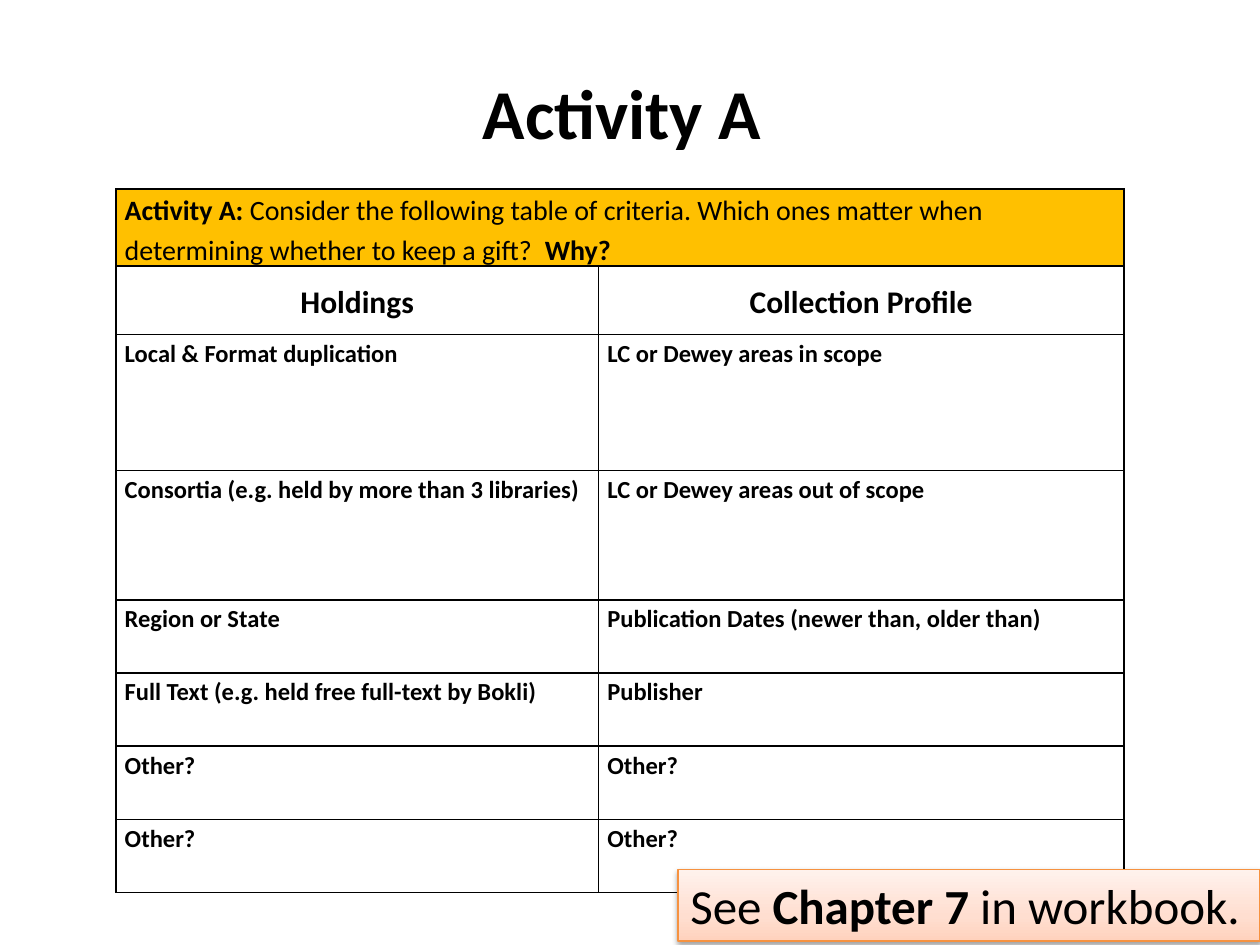
import pptx
import pptx.dml.color
import pptx.enum.shapes
import pptx.enum.text
import pptx.oxml
import pptx.oxml.ns
import pptx.util
from lxml import etree

Inches, Pt = pptx.util.Inches, pptx.util.Pt
RGBColor = pptx.dml.color.RGBColor
PP_ALIGN = pptx.enum.text.PP_ALIGN
ANCHOR = pptx.enum.text.MSO_ANCHOR

BLACK = RGBColor(0x00, 0x00, 0x00)
WHITE = RGBColor(0xFF, 0xFF, 0xFF)
AMBER = RGBColor(0xFF, 0xC0, 0x00)
ORANGE = RGBColor(0xF6, 0x92, 0x40)
PEACH_STOPS = [(0, RGBColor(0xFF, 0xD2, 0xBD)),
               (35, RGBColor(0xFF, 0xDE, 0xD0)),
               (100, RGBColor(0xFF, 0xF2, 0xED))]

FONT = "Calibri"
SLIDE_W, SLIDE_H = 10, 7.5
COLUMN_WIDTHS = [3.83, 4.17]
ROW_HEIGHTS = [0.54, 0.54, 1.08, 1.03] + [0.58] * 4

PROMPT = [("Activity A: ", True),
          ("Consider the following table of criteria. Which ones matter when "
           "determining whether to keep a gift?  ", False),
          ("Why?", True)]
HEADINGS = ("Holdings", "Collection Profile")
CRITERIA = [
    ("Local & Format duplication", "LC or Dewey areas in scope"),
    ("Consortia (e.g. held by more than 3 libraries)",
     "LC or Dewey areas out of scope"),
    ("Region or State", "Publication Dates (newer than, older than)"),
    ("Full Text (e.g. held free full-text by Bokli)", "Publisher"),
    ("Other?", "Other?"),
    ("Other?", "Other?"),
]


def write_runs(paragraph, runs, size):
    """Add (words, bold) runs in the slide's font."""
    for words, bold in runs:
        run = paragraph.add_run()
        run.text = words
        run.font.name = FONT
        run.font.size = Pt(size)
        run.font.bold = bold
        run.font.color.rgb = BLACK


def add_borders(cell):
    """Draw a 1 pt black line on every side; lines precede the fill."""
    properties = cell._tc.get_or_add_tcPr()
    for position, side in enumerate(("lnL", "lnR", "lnT", "lnB")):
        line = pptx.oxml.parse_xml(
            f'<a:{side} {pptx.oxml.ns.nsdecls("a")} w="12700"><a:solidFill>'
            f'<a:srgbClr val="{BLACK}"/></a:solidFill></a:{side}>')
        properties.insert(position, line)


def fill_cell(cell, runs, size, color=WHITE, heading=False):
    cell.margin_left = cell.margin_right = Inches(0.07)
    cell.margin_top = cell.margin_bottom = 0
    cell.vertical_anchor = ANCHOR.MIDDLE if heading else ANCHOR.TOP
    cell.fill.solid()
    cell.fill.fore_color.rgb = color
    paragraph = cell.text_frame.paragraphs[0]
    paragraph.alignment = PP_ALIGN.CENTER if heading else PP_ALIGN.LEFT
    paragraph.line_spacing = 1.15
    paragraph.space_after = Pt(10)
    write_runs(paragraph, runs, size)


def add_title(slide, left, top, width, height):
    title = slide.shapes.add_textbox(
        Inches(left), Inches(top), Inches(width), Inches(height))
    title.text_frame.word_wrap = True
    paragraph = title.text_frame.paragraphs[0]
    paragraph.alignment = PP_ALIGN.CENTER
    write_runs(paragraph, [("Activity A ", True)], 40)


def add_criteria_table(slide, left, top):
    table = slide.shapes.add_table(
        len(ROW_HEIGHTS), len(COLUMN_WIDTHS), Inches(left), Inches(top),
        Inches(sum(COLUMN_WIDTHS)), Inches(sum(ROW_HEIGHTS))).table
    table.first_row = table.horz_banding = False
    for column, width in zip(table.columns, COLUMN_WIDTHS):
        column.width = Inches(width)
    for row, height in zip(table.rows, ROW_HEIGHTS):
        row.height = Inches(height)

    # Prompt across both columns
    table.cell(0, 0).merge(table.cell(0, 1))
    fill_cell(table.cell(0, 0), PROMPT, 16, AMBER)

    # Headings, then criteria
    for r, labels in enumerate([HEADINGS] + CRITERIA, start=1):
        heading = r == 1
        for c, label in enumerate(labels):
            fill_cell(table.cell(r, c), [(label, True)],
                      18 if heading else 14, heading=heading)

    for cell in table.iter_cells():
        add_borders(cell)


def add_workbook_note(slide, left, top, width, height):
    note = slide.shapes.add_shape(
        pptx.enum.shapes.MSO_SHAPE.RECTANGLE,
        Inches(left), Inches(top), Inches(width), Inches(height))
    note.shadow.inherit = False
    note.line.color.rgb = ORANGE
    note.line.width = Pt(0.75)

    # Three-stop gradient, darkest at the bottom
    note.fill.gradient()
    note.fill.gradient_angle = 90
    stops = note._element.spPr.find(".//" + pptx.oxml.ns.qn("a:gsLst"))
    for stop in list(stops):
        stops.remove(stop)
    for percent, color in PEACH_STOPS:
        stop = etree.SubElement(stops, pptx.oxml.ns.qn("a:gs"),
                                pos=str(percent * 1000))
        etree.SubElement(stop, pptx.oxml.ns.qn("a:srgbClr"), val=str(color))

    # Soft shadow below
    effects = note._element.spPr.find(pptx.oxml.ns.qn("a:effectLst"))
    effects.append(pptx.oxml.parse_xml(
        f'<a:outerShdw {pptx.oxml.ns.nsdecls("a")} blurRad="{Pt(3.1)}" '
        f'dist="{Pt(1.6)}" dir="5400000" rotWithShape="0">'
        f'<a:srgbClr val="{BLACK}"><a:alpha val="38000"/></a:srgbClr>'
        '</a:outerShdw>'))

    frame = note.text_frame
    frame.word_wrap = False
    frame.vertical_anchor = ANCHOR.TOP
    frame.paragraphs[0].alignment = PP_ALIGN.LEFT
    write_runs(frame.paragraphs[0], [("See ", False), ("Chapter 7", True),
                                     (" in workbook.", False)], 28)


def main():
    deck = pptx.Presentation()
    deck.slide_width, deck.slide_height = Inches(SLIDE_W), Inches(SLIDE_H)
    slide = deck.slides.add_slide(deck.slide_layouts[6])
    add_title(slide, 0, 0.5, SLIDE_W, 0.77)
    add_criteria_table(slide, 0.92, 1.5)
    note_width = 4.62
    add_workbook_note(slide, SLIDE_W - note_width, 0.92 * SLIDE_H,
                      note_width, 0.57)
    deck.save("out.pptx")


if __name__ == "__main__":
    main()
